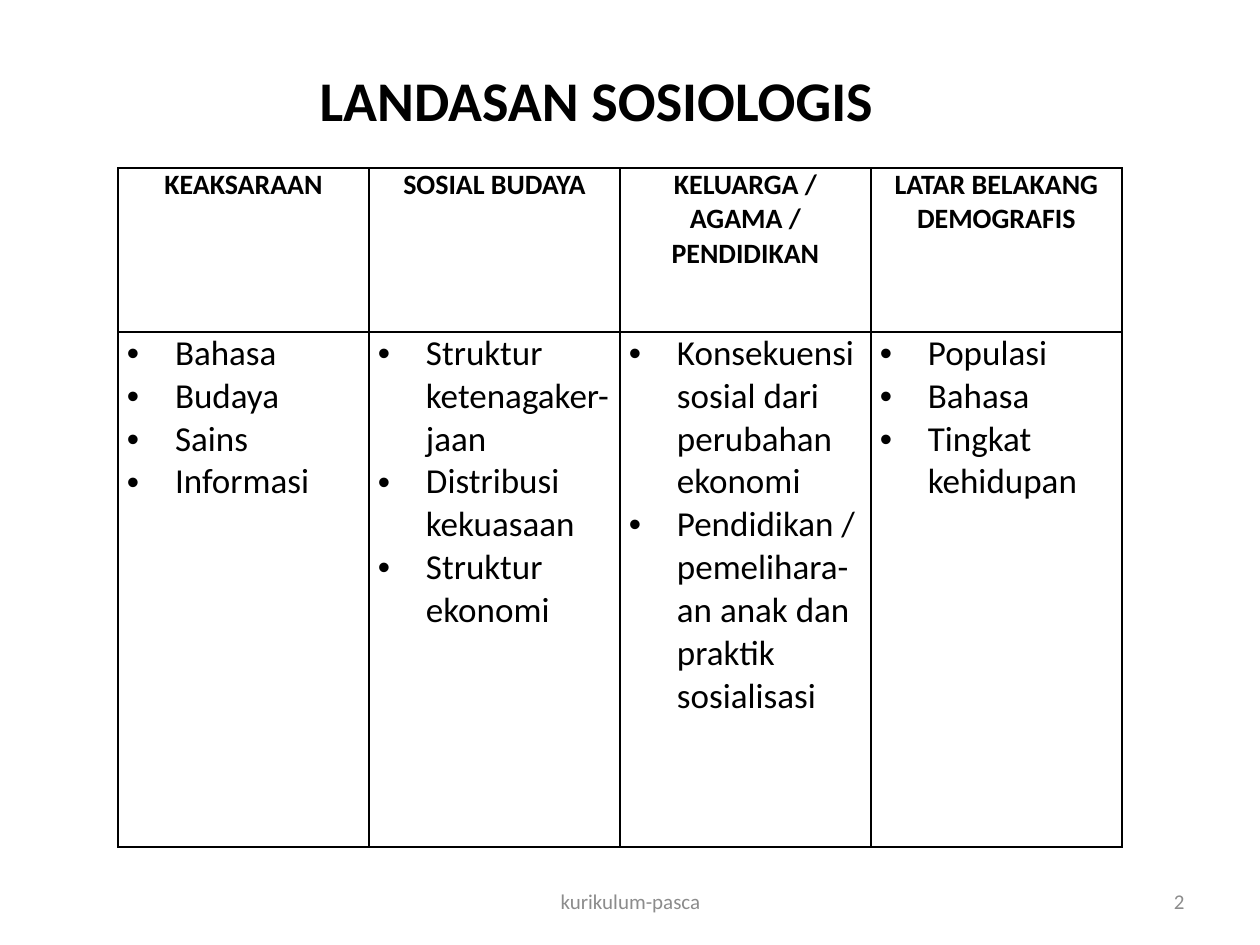
from pptx import Presentation
from pptx.dml.color import RGBColor
from pptx.enum.text import MSO_ANCHOR as Anchor, PP_ALIGN as Align
from pptx.oxml import parse_xml
from pptx.oxml.ns import nsdecls
from pptx.util import Pt

PX = 914400 // 126
FONT = "Calibri"
COLORS = {"ink": "000000", "muted": "8C8C8C"}

TITLE = "LANDASAN SOSIOLOGIS"
TOPICS = [
    (["KEAKSARAAN"], ["Bahasa", "Budaya", "Sains", "Informasi"]),
    (["SOSIAL BUDAYA"],
     ["Struktur ketenagaker-jaan", "Distribusi kekuasaan", "Struktur ekonomi"]),
    (["KELUARGA / AGAMA /", "PENDIDIKAN"],
     ["Konsekuensi sosial dari perubahan ekonomi",
      "Pendidikan / pemelihara-an anak dan praktik sosialisasi"]),
    (["LATAR BELAKANG", "DEMOGRAFIS"],
     ["Populasi", "Bahasa", "Tingkat kehidupan"]),
]
FOOTERS = [
    ("kurikulum-pasca", (431, 876, 399, 50), Align.CENTER),
    ("2", (903, 876, 294, 50), Align.RIGHT),
]
COL_W = 251
ROW_H = [164, 515]
INDENT = 48


def px(*vals):
    return [val * PX for val in vals]


def write(frame, lines, size, color, align, bold=False):
    frame.text = "\n".join(lines)
    for para in frame.paragraphs:
        para.alignment = align
        for run in para.runs:
            font = run.font
            font.name, font.size, font.bold = FONT, Pt(size), bold
            font.color.rgb = RGBColor.from_string(COLORS[color])


def border(cell):
    props = cell._tc.get_or_add_tcPr()
    for side in "LRTB":
        props.append(parse_xml(
            f'<a:ln{side} {nsdecls("a")} w="12700"><a:solidFill>'
            f'<a:srgbClr val="{COLORS["ink"]}"/></a:solidFill></a:ln{side}>'))


def bullet(para):
    props = para._p.get_or_add_pPr()
    props.set("marL", str(INDENT * PX))
    props.set("indent", str(-INDENT * PX))
    props.append(parse_xml(f'<a:buFont {nsdecls("a")} typeface="Arial"/>'))
    props.append(parse_xml(f'<a:buChar {nsdecls("a")} char="•"/>'))


def fill_cell(cell, lines, head):
    cell.margin_left = cell.margin_right = 9 * PX
    cell.margin_top = cell.margin_bottom = 0
    cell.vertical_anchor = Anchor.TOP
    border(cell)
    cell.fill.background()
    frame = cell.text_frame
    if head:
        write(frame, lines, 16, "ink", Align.CENTER, True)
    else:
        write(frame, lines, 20, "ink", Align.LEFT)
        for para in frame.paragraphs:
            bullet(para)


def main():
    deck = Presentation()
    deck.slide_width, deck.slide_height = px(1260, 945)
    slide = deck.slides.add_slide(deck.slide_layouts[5])
    shapes = slide.shapes

    title = shapes.title
    title.left, title.top, title.width, title.height = px(305, 59, 583, 118)
    write(title.text_frame, [TITLE], 32, "ink", Align.CENTER, True)
    title.text_frame.vertical_anchor = Anchor.TOP
    title.text_frame.word_wrap = False

    box = px(118, 168, COL_W * len(TOPICS), sum(ROW_H))
    table = shapes.add_table(len(ROW_H), len(TOPICS), *box).table
    table.first_row = table.horz_banding = False
    for row, high in zip(table.rows, ROW_H):
        row.height = high * PX
    for col, topic in enumerate(TOPICS):
        table.columns[col].width = COL_W * PX
        for row, lines in enumerate(topic):
            fill_cell(table.cell(row, col), lines, row == 0)

    for text, box, align in FOOTERS:
        frame = shapes.add_textbox(*px(*box)).text_frame
        frame.word_wrap = True
        frame.vertical_anchor = Anchor.MIDDLE
        write(frame, [text], 12, "muted", align)

    deck.save("out.pptx")


if __name__ == "__main__":
    main()
